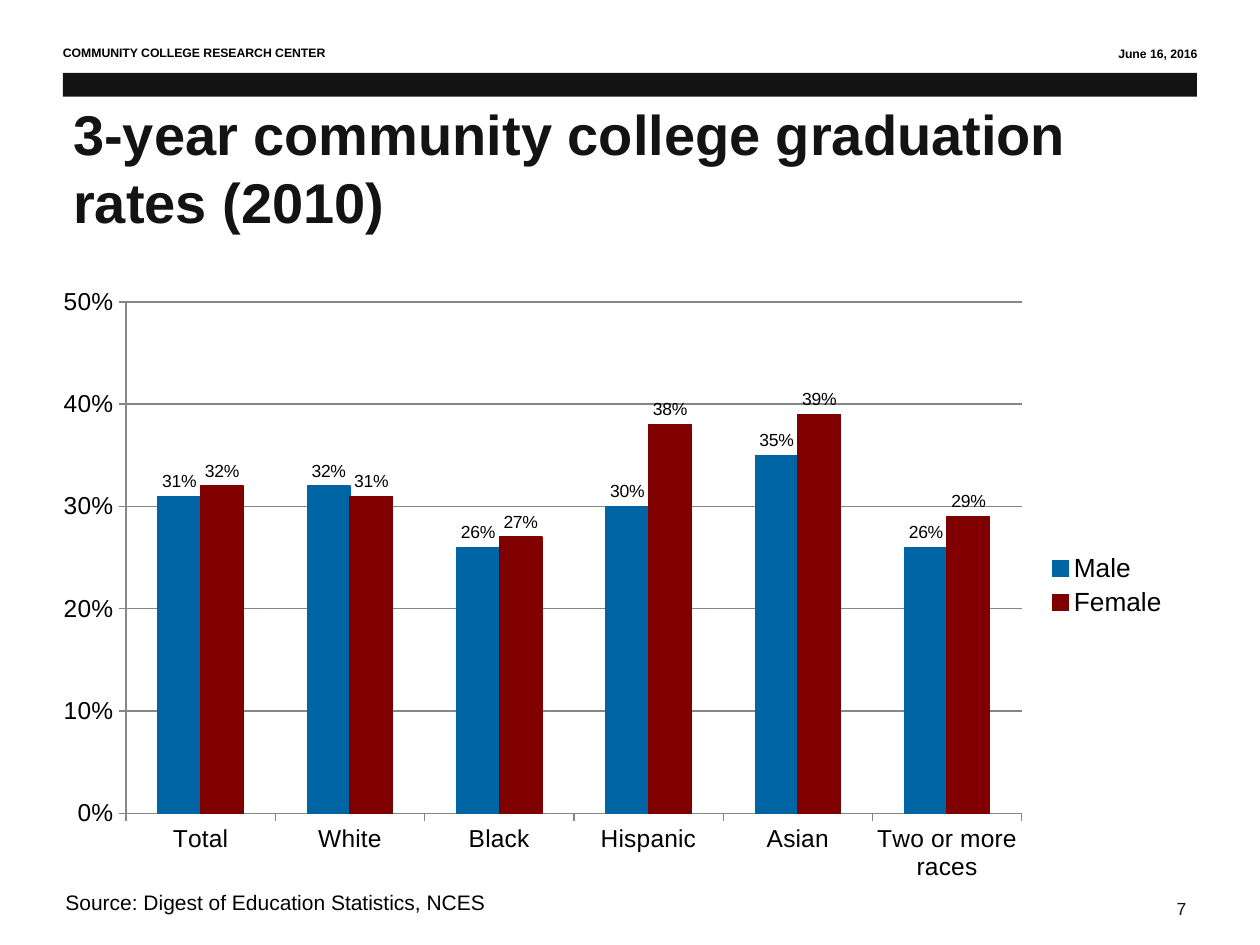
from lxml import etree
from pptx import Presentation
from pptx.chart.data import CategoryChartData
from pptx.dml.color import RGBColor
from pptx.enum.chart import XL_CHART_TYPE, XL_LABEL_POSITION, XL_LEGEND_POSITION, XL_TICK_MARK
from pptx.enum.shapes import MSO_SHAPE
from pptx.enum.text import MSO_ANCHOR, PP_ALIGN
from pptx.oxml.ns import qn
from pptx.util import Cm, Pt

COLUMNS = XL_CHART_TYPE.COLUMN_CLUSTERED
LABEL_ABOVE = XL_LABEL_POSITION.OUTSIDE_END
LEGEND_RIGHT = XL_LEGEND_POSITION.RIGHT
TICK_OUT, TICK_NONE = XL_TICK_MARK.OUTSIDE, XL_TICK_MARK.NONE
RECTANGLE = MSO_SHAPE.RECTANGLE
MIDDLE = MSO_ANCHOR.MIDDLE
LEFT, RIGHT = PP_ALIGN.LEFT, PP_ALIGN.RIGHT

THEME = {
    "font": "Arial",
    "ink": RGBColor.from_string("141313"),
    "black": RGBColor.from_string("000000"),
    "grid": RGBColor.from_string("868686"),
    "male": RGBColor.from_string("0065A4"),
    "female": RGBColor.from_string("800000"),
    "title": Pt(32),
    "header": Pt(7),
    "source": Pt(12),
    "number": Pt(10),
    "axis": Pt(14),
    "legend": Pt(15),
    "label": Pt(10),
    "chart": Pt(18),
}


def style_font(font, size, color, bold=False):
    values = {"name": THEME["font"], "size": THEME[size], "bold": bold}
    for name, value in values.items():
        setattr(font, name, value)
    font.color.rgb = THEME[color]


prs = Presentation()
prs.slide_width, prs.slide_height = Cm(25.4), Cm(19.05)
slide = prs.slides.add_slide(prs.slide_layouts[5])

band = slide.shapes.add_shape(RECTANGLE, Cm(1.27), Cm(1.47), Cm(22.86), Cm(0.48))
band.shadow.inherit = False
band.fill.solid()
band.fill.fore_color.rgb = THEME["ink"]
band.line.fill.background()

title = slide.shapes.title
title_place = {"left": Cm(1.22), "top": Cm(1.78), "width": Cm(22.86), "height": Cm(3.18)}
for name, value in title_place.items():
    setattr(title, name, value)
title.text_frame.text = "3-year community college graduation rates (2010)"
title.text_frame.vertical_anchor = MIDDLE
heading = title.text_frame.paragraphs[0]
heading.alignment = LEFT
style_font(heading.runs[0].font, "title", "ink", True)

captions = [
    ("COMMUNITY COLLEGE RESEARCH CENTER", 1.02, 0.79, 9.04, 0.56, "header", "black", True, LEFT),
    ("June 16, 2016", 16.31, 0.81, 8.08, 0.56, "header", "black", True, RIGHT),
    ("Source: Digest of Education Statistics, NCES", 1.07, 17.81, 23.06, 0.76, "source", "black", False, LEFT),
    ("7", 23.47, 17.98, 1.17, 0.69, "number", "ink", False, LEFT),
]
for words, left, top, width, height, size, color, bold, alignment in captions:
    caption = slide.shapes.add_textbox(Cm(left), Cm(top), Cm(width), Cm(height))
    caption.text_frame.word_wrap = True
    caption.text_frame.text = words
    line = caption.text_frame.paragraphs[0]
    line.alignment = alignment
    style_font(line.runs[0].font, size, color, bold)

rates = CategoryChartData(number_format="0%")
rates.categories = ["Total", "White", "Black", "Hispanic", "Asian", "Two or more races"]
rates.add_series("Male", [0.31, 0.32, 0.26, 0.30, 0.35, 0.26])
rates.add_series("Female", [0.32, 0.31, 0.27, 0.38, 0.39, 0.29])
chart = slide.shapes.add_chart(
    COLUMNS, Cm(0.94), Cm(5.59), Cm(22.86), Cm(12.42), rates
).chart
style_font(chart.font, "chart", "black")
chart.has_title = False
chart.has_legend = True
chart.legend.position = LEGEND_RIGHT
chart.legend.include_in_layout = False
style_font(chart.legend.font, "legend", "black")

columns = chart.plots[0]
columns.gap_width = 150
columns.overlap = 0
columns.vary_by_categories = False
for sex, color in zip(columns.series, ("male", "female")):
    sex.format.fill.solid()
    sex.format.fill.fore_color.rgb = THEME[color]
    sex.format.line.color.rgb = THEME[color]
    sex.format.line.width = Pt(0.75)
    label_values = {
        "show_value": True,
        "number_format": "0%",
        "number_format_is_linked": False,
        "position": LABEL_ABOVE,
    }
    for name, value in label_values.items():
        setattr(sex.data_labels, name, value)
    style_font(sex.data_labels.font, "label", "black")

for axis in (chart.category_axis, chart.value_axis):
    axis.major_tick_mark, axis.minor_tick_mark = TICK_OUT, TICK_NONE
    style_font(axis.tick_labels.font, "axis", "black")
    axis.format.line.color.rgb = THEME["grid"]
    axis.format.line.width = Pt(0.75)

percent = chart.value_axis
percent_values = {
    "minimum_scale": 0,
    "maximum_scale": 0.5,
    "major_unit": 0.1,
    "has_major_gridlines": True,
}
for name, value in percent_values.items():
    setattr(percent, name, value)
percent.tick_labels.number_format = "0%"
percent.tick_labels.number_format_is_linked = False
percent.major_gridlines.format.line.color.rgb = THEME["grid"]
percent.major_gridlines.format.line.width = Pt(0.75)

plot_area = columns._element.getparent()
for old_layout in plot_area.findall(qn("c:layout")):
    plot_area.remove(old_layout)
layout = etree.Element(qn("c:layout"))
plot_area.insert(0, layout)
manual = etree.SubElement(layout, qn("c:manualLayout"))
placement = {
    "layoutTarget": "inner", "xMode": "edge", "yMode": "edge",
    "x": 0.07, "y": 0.04, "w": 0.79, "h": 0.83,
}
for name, value in placement.items():
    etree.SubElement(manual, qn(f"c:{name}")).set("val", str(value))

prs.save("out.pptx")
